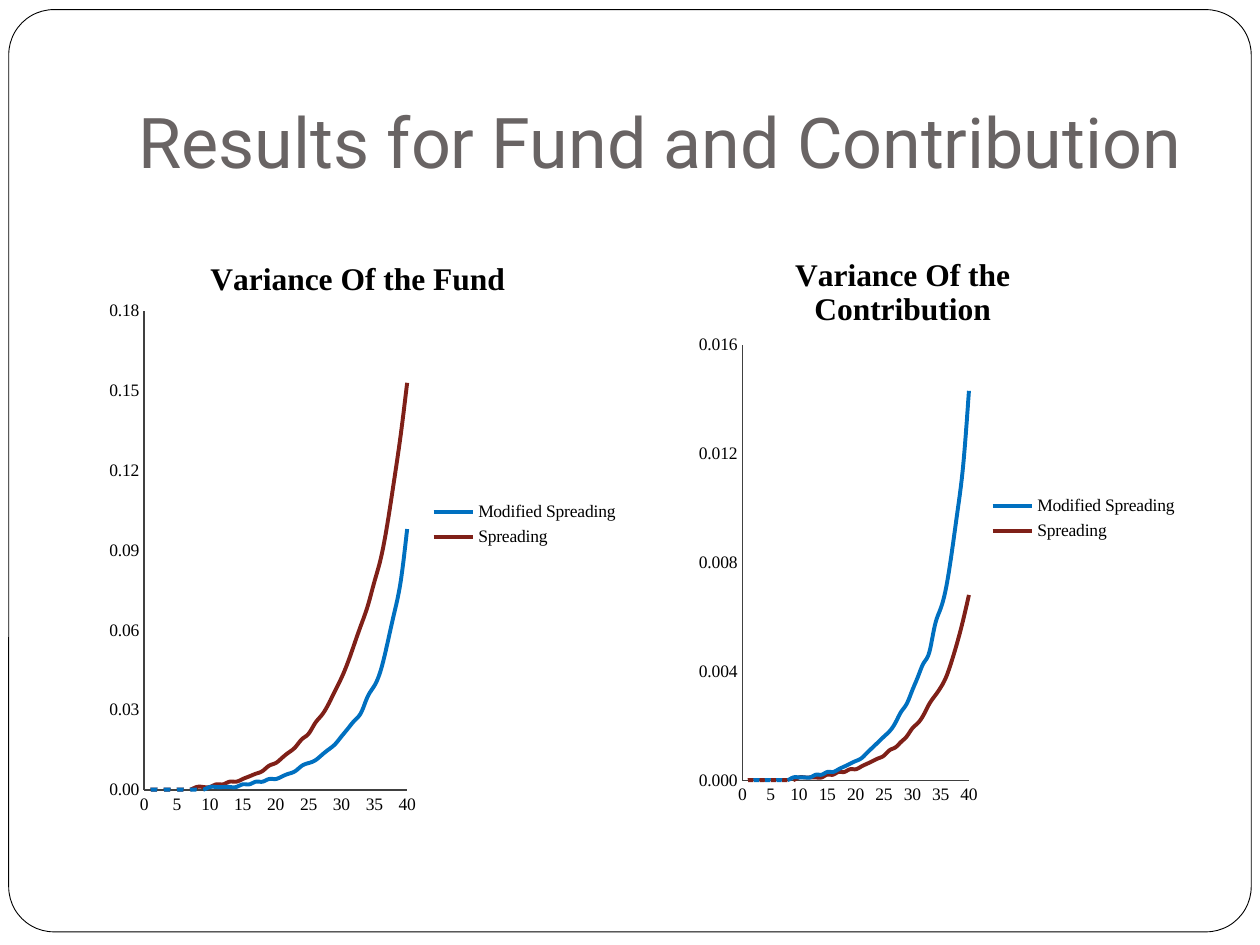
from dataclasses import dataclass

from lxml.etree import SubElement
from pptx import Presentation
from pptx.chart.data import XyChartData
from pptx.dml.color import RGBColor
from pptx.enum.chart import XL_CHART_TYPE as ChartType
from pptx.enum.chart import XL_LEGEND_POSITION as LegendPosition
from pptx.enum.chart import XL_TICK_MARK as TickMark
from pptx.enum.shapes import MSO_SHAPE as Shape
from pptx.enum.text import MSO_ANCHOR as Anchor
from pptx.enum.text import MSO_AUTO_SIZE as AutoSize
from pptx.enum.text import PP_ALIGN as Align
from pptx.oxml.ns import qn
from pptx.util import Pt

WHITE = RGBColor(0xFF, 0xFF, 0xFF)
BLACK = RGBColor(0x00, 0x00, 0x00)
TITLE_GREY = RGBColor(0x69, 0x64, 0x64)
AXIS_GREY = RGBColor(0x40, 0x40, 0x40)
BLUE = RGBColor(0x00, 0x70, 0xC0)
DARK_RED = RGBColor(0x7F, 0x20, 0x18)

TITLE_FONT = "Roboto"
CHART_FONT = "Times New Roman"
LAST_YEAR = 40


@dataclass
class Curve:
    name: str
    color: RGBColor
    steps: list[int]  # whole multiples of the chart's unit


@dataclass
class VarianceChart:
    title: str
    box: tuple[float, float, float, float]  # left, top, width, height in points
    decimals: int  # digits kept in the data
    number_format: str
    maximum: float
    major_unit: float
    axis_width: float
    # Fractions of the chart's width and height
    plot_area: tuple[float, ...]
    title_at: tuple[float, ...]
    legend_at: tuple[float, ...]
    curves: list[Curve]


CHARTS = [
    VarianceChart(
        "Variance Of the Fund", (56.2, 123.8, 303.8, 348.5),
        3, "0.00", 0.18, 0.03, 1,
        (0.086, 0.155, 0.495, 0.785), (0.2, 0.06), (0.62, 0.46),
        [
            Curve("Modified Spreading", BLUE, [
                0, 0, 0, 0, 0, 0, 0, 0, 0, 1,
                1, 1, 1, 1, 2, 2, 3, 3, 4, 4,
                5, 6, 7, 9, 10, 11, 13, 15, 17, 20,
                23, 26, 29, 35, 39, 45, 55, 66, 78, 98]),
            Curve("Spreading", DARK_RED, [
                0, 0, 0, 0, 0, 0, 0, 1, 1, 1,
                2, 2, 3, 3, 4, 5, 6, 7, 9, 10,
                12, 14, 16, 19, 21, 25, 28, 32, 37, 42,
                48, 55, 62, 69, 78, 87, 100, 116, 133, 153]),
        ]),
    VarianceChart(
        "Variance Of the Contribution", (393.8, 123.8, 286.6, 343.4),
        4, "0.000", 0.016, 0.004, 0.5,
        (0.106, 0.213, 0.452, 0.725), (0.2, 0.055), (0.594, 0.457),
        [
            Curve("Modified Spreading", BLUE, [
                0, 0, 0, 0, 0, 0, 0, 0, 1, 1,
                1, 1, 2, 2, 3, 3, 4, 5, 6, 7,
                8, 10, 12, 14, 16, 18, 21, 25, 28, 33,
                38, 43, 47, 57, 63, 71, 84, 99, 116, 143]),
            Curve("Spreading", DARK_RED, [
                0, 0, 0, 0, 0, 0, 0, 0, 0, 1,
                1, 1, 1, 1, 2, 2, 3, 3, 4, 4,
                5, 6, 7, 8, 9, 11, 12, 14, 16, 19,
                21, 24, 28, 31, 34, 38, 44, 51, 59, 68]),
        ]),
]


def set_all(target, values: dict) -> None:
    for name, value in values.items():
        setattr(target, name, value)


def place_part(part, position: int, fractions: tuple[float, ...]) -> None:
    """Give a chart part a manual layout, as child number `position`."""
    for old in part.findall(qn("c:layout")):
        part.remove(old)
    layout = SubElement(part, qn("c:layout"))
    part.insert(position, layout)
    manual = SubElement(layout, qn("c:manualLayout"))
    settings = {"xMode": "edge", "yMode": "edge"}
    if len(fractions) == 4:
        settings = {"layoutTarget": "inner"} | settings
    settings |= dict(zip("xywh", fractions))
    for tag, value in settings.items():
        SubElement(manual, qn(f"c:{tag}")).set("val", str(value))


def format_axis(axis, maximum: float, unit: float, number_format: str,
                width: float) -> None:
    set_all(axis, {
        "minimum_scale": 0, "maximum_scale": maximum, "major_unit": unit,
        "has_major_gridlines": False, "has_minor_gridlines": False,
        "major_tick_mark": TickMark.NONE, "minor_tick_mark": TickMark.NONE,
    })
    set_all(axis.tick_labels, {
        "number_format": number_format, "number_format_is_linked": False})
    axis.format.line.color.rgb = AXIS_GREY
    axis.format.line.width = Pt(width)


def draw_chart(slide, spec_: VarianceChart) -> None:
    data = XyChartData()
    for curve in spec_.curves:
        points = data.add_series(curve.name)
        for year, step in enumerate(curve.steps, start=1):
            points.add_data_point(year, round(step / 10 ** spec_.decimals, spec_.decimals))
    chart = slide.shapes.add_chart(
        ChartType.XY_SCATTER_SMOOTH_NO_MARKERS, *map(Pt, spec_.box), data).chart
    set_all(chart.font, {"name": CHART_FONT, "size": Pt(10)})
    chart.font.color.rgb = BLACK

    # Title and legend
    chart.has_title = True
    heading = chart.chart_title.text_frame
    heading.text = spec_.title
    heading_font = heading.paragraphs[0].runs[0].font
    set_all(heading_font, {"name": CHART_FONT, "size": Pt(18), "bold": True})
    heading_font.color.rgb = BLACK
    chart.has_legend = True
    set_all(chart.legend, {
        "position": LegendPosition.RIGHT, "include_in_layout": False})

    # Axes
    format_axis(chart.category_axis, LAST_YEAR, 5, "0", spec_.axis_width)
    format_axis(chart.value_axis, spec_.maximum, spec_.major_unit,
                spec_.number_format, spec_.axis_width)

    # Smooth curves
    plot = chart.plots[0]
    plot.vary_by_categories = False
    for series, curve in zip(plot.series, spec_.curves):
        series.format.line.color.rgb = curve.color
        series.format.line.width = Pt(2.25)
    root = chart.element
    for smooth in root.iter(qn("c:smooth")):
        smooth.set("val", "1")

    # Positions inside the chart
    place_part(next(root.iter(qn("c:plotArea"))), 0, spec_.plot_area)
    place_part(next(root.iter(qn("c:title"))), 1, spec_.title_at)
    place_part(next(root.iter(qn("c:legend"))), 1, spec_.legend_at)


def draw_frame(slide) -> None:
    frame = slide.shapes.add_shape(
        Shape.ROUNDED_RECTANGLE, Pt(5), Pt(5.5), Pt(710), Pt(527))
    frame.adjustments[0] = 0.049
    frame.shadow.inherit = False
    frame.fill.solid()
    frame.fill.fore_color.rgb = WHITE
    frame.line.color.rgb = BLACK
    frame.line.width = Pt(0.5)
    slide.shapes.element.insert(2, frame.element)  # behind the title


def write_title(slide) -> None:
    title = slide.shapes.title
    set_all(title, {"left": Pt(72), "top": Pt(21.6),
                    "width": Pt(612), "height": Pt(90)})
    text = title.text_frame
    text.text = "Results for Fund and Contribution"
    set_all(text, {
        "vertical_anchor": Anchor.BOTTOM, "auto_size": AutoSize.NONE,
        "word_wrap": True, "margin_left": Pt(7.2), "margin_right": Pt(7.2),
        "margin_top": Pt(3.6), "margin_bottom": Pt(7.2)})
    line = text.paragraphs[0]
    line.alignment = Align.LEFT
    set_all(line.runs[0].font, {"name": TITLE_FONT, "size": Pt(40)})
    line.runs[0].font.color.rgb = TITLE_GREY


def main() -> None:
    deck = Presentation()
    set_all(deck, {"slide_width": Pt(720), "slide_height": Pt(540)})
    slide = deck.slides.add_slide(deck.slide_layouts[5])
    draw_frame(slide)
    write_title(slide)
    for chart in CHARTS:
        draw_chart(slide, chart)
    deck.save("out.pptx")


if __name__ == "__main__":
    main()
